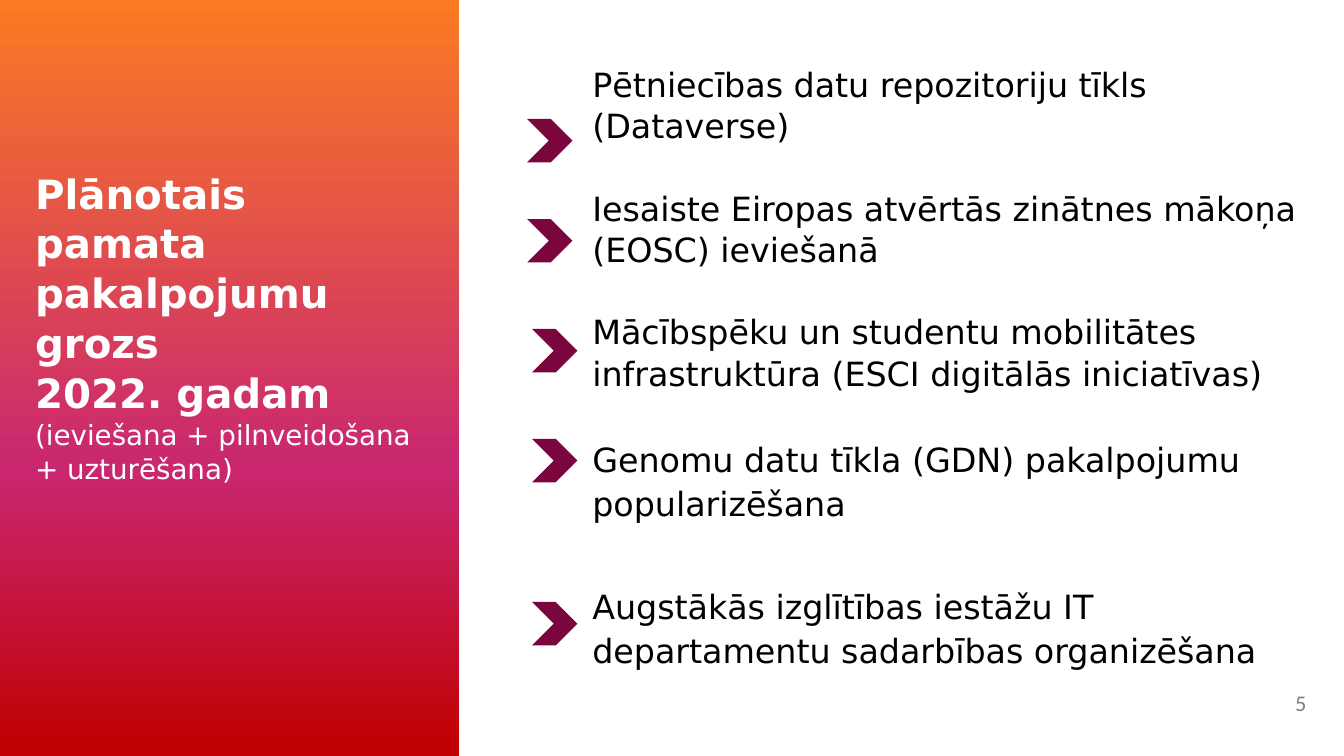
from copy import deepcopy
from dataclasses import dataclass

from pptx import Presentation
from pptx.dml.color import RGBColor as Rgb
from pptx.enum.shapes import MSO_SHAPE as Kind
from pptx.enum.text import MSO_ANCHOR as Anchor
from pptx.oxml.ns import qn
from pptx.util import Pt


@dataclass(frozen=True)
class Theme:
    font: str = "DejaVu Sans"
    plain: str = "Calibri"
    white: str = "FFFFFF"
    black: str = "000000"
    grey: str = "808080"
    plum: str = "7B063D"
    fade: tuple = ((0, "C00000"), (0.38, "C92770"), (1, "FB7A23"))
    title: float = 28.8
    note: float = 19.8
    body: float = 23.8
    page: float = 16
    lead: float = 1.03
    loose: float = 1.12


class Deck:
    def __init__(self, theme):
        self.theme = theme
        self.file = Presentation()
        self.file.slide_width, self.file.slide_height = Pt(960), Pt(540)
        self.slide = self.file.slides.add_slide(self.file.slide_layouts[6])

    def shape(self, kind, box):
        shape = self.slide.shapes.add_shape(kind, *map(Pt, box))
        shape.shadow.inherit = False
        shape.line.fill.background()
        return shape

    def panel(self, box):
        """Rectangle fading upwards through the three theme stops."""
        shape = self.shape(Kind.RECTANGLE, box)
        fill = shape.fill
        fill.gradient()
        fill.gradient_angle = 90
        first = next(shape._element.spPr.iter(qn("a:gs")))
        first.addnext(deepcopy(first))
        for stop, (place, color) in zip(fill.gradient_stops, self.theme.fade):
            stop.position = place
            stop.color.rgb = Rgb.from_string(color)

    def arrow(self, left, top):
        fill = self.shape(Kind.CHEVRON, (left, top, 32.4, 31)).fill
        fill.solid()
        fill.fore_color.rgb = Rgb.from_string(self.theme.plum)

    def text(self, box, words, anchor=Anchor.MIDDLE, wrap=True):
        """Text box with one paragraph per line of words; returns them."""
        frame = self.slide.shapes.add_textbox(*map(Pt, box)).text_frame
        frame.word_wrap = wrap
        frame.vertical_anchor = anchor
        frame.text = words
        return frame.paragraphs

    def style(self, para, size, color, bold=False, font=None, lead=None):
        para.line_spacing = lead or self.theme.lead
        for run in para.runs:
            run.font.name = font or self.theme.font
            run.font.size = Pt(size)
            run.font.bold = bold
            run.font.color.rgb = Rgb.from_string(color)


TITLE = (
    "Plānotais\vpamata\vpakalpojumu\vgrozs\v2022. gadam\n"
    "(ieviešana + pilnveidošana\v+ uzturēšana)"
)
# Wording, space before, whether the lines are set loosely
ITEMS = (
    ("Pētniecības datu repozitoriju tīkls (Dataverse)", 0, False),
    ("Iesaiste Eiropas atvērtās zinātnes mākoņa (EOSC) ieviešanā", 29.5, False),
    ("Mācībspēku un studentu mobilitātes infrastruktūra "
     "(ESCI digitālās iniciatīvas)", 29.5, False),
    ("Genomu datu tīkla (GDN) pakalpojumu popularizēšana", 29.5, True),
    ("Augstākās izglītības iestāžu IT departamentu sadarbības organizēšana",
     41, True),
)
ARROWS = ((376.5, 85), (376.5, 156.5), (380, 235), (380, 313.5), (380, 430))


def main():
    theme = Theme()
    deck = Deck(theme)
    deck.panel((0, 0, 328, 540))

    head, note = deck.text((18, 181, 310, 104), TITLE)
    deck.style(head, theme.title, theme.white, bold=True)
    deck.style(note, theme.note, theme.white)

    words = "\n".join(item[0] for item in ITEMS)
    paras = deck.text((416, 42, 544, 440), words)
    for para, (_, gap, loose) in zip(paras, ITEMS):
        lead = theme.loose if loose else theme.lead
        deck.style(para, theme.body, theme.black, lead=lead)
        para.space_before = Pt(gap)

    for left, top in ARROWS:
        deck.arrow(left, top)

    page = deck.text((918, 489, 23, 26.6), "5", Anchor.TOP, wrap=False)[0]
    deck.style(page, theme.page, theme.grey, font=theme.plain, lead=1.0)
    deck.file.save("out.pptx")


if __name__ == "__main__":
    main()
